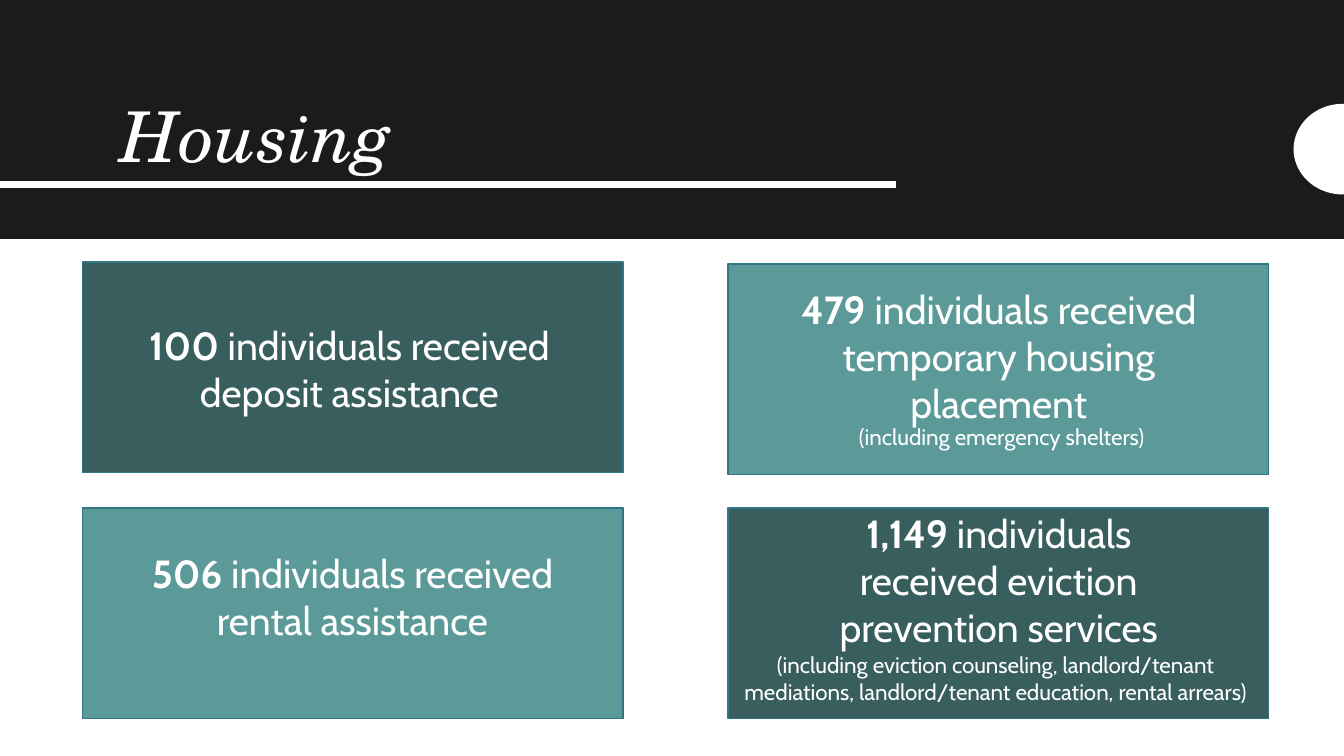
from dataclasses import dataclass

from lxml.etree import SubElement
from pptx import Presentation
from pptx.dml.color import RGBColor
from pptx.enum.shapes import MSO_CONNECTOR, MSO_SHAPE
from pptx.enum.text import MSO_ANCHOR, MSO_AUTO_SIZE, PP_ALIGN
from pptx.oxml.ns import qn
from pptx.util import Inches, Pt

TITLE = "Housing"
CARDS = [
    {"place": (0.82, 2.6), "tone": "deep", "text": (1.35, 3.14, 4.23, 1.04),
     "count": "100", "label": " individuals received deposit assistance"},
    {"place": (7.22, 2.62), "tone": "light", "text": (7.79, 2.78, 4.23, 1.51),
     "count": "479", "label": " individuals received temporary housing placement",
     "note": "(including emergency shelters)", "foot": (7.82, 4.15, 4.23, 0.37)},
    {"place": (0.82, 5.04), "tone": "light", "text": (1.38, 5.4, 4.23, 1.04),
     "count": "506", "label": " individuals received rental assistance"},
    {"place": (7.22, 5.04), "tone": "deep", "text": (7.79, 5, 4.23, 1.51),
     "count": "1,149", "label": " individuals received eviction prevention services",
     "note": "(including eviction counseling, landlord/tenant mediations, "
             "landlord/tenant education, rental arrears)",
     "foot": (7.16, 6.41, 5.43, 0.64)},
]
CARD = (5.36, 2.09)


@dataclass(frozen=True)
class Theme:
    dark: str = "1D1A1D"
    white: str = "FFFFFF"
    deep: str = "385E5D"
    light: str = "5C9A99"
    edge: str = "327587"
    serif: str = "TeX Gyre Schola"
    sans: str = "Cabin"
    head: float = 50
    main: float = 28
    note: float = 16


THEME = Theme()


def tint(name):
    return RGBColor.from_string(getattr(THEME, name))


def span(box):
    return [Inches(n) for n in box]


def add_shape(slide, kind, box, color, edge=None):
    shape = slide.shapes.add_shape(kind, *span(box))
    shape.shadow.inherit = False
    shape.fill.solid()
    shape.fill.fore_color.rgb = tint(color)
    if edge:
        shape.line.color.rgb = tint(edge)
        shape.line.width = Pt(1)
    else:
        shape.line.fill.background()


def set_font(para, face, size):
    para.font.name = face
    para.font.size = Pt(size)
    para.font.color.rgb = tint("white")


def add_text(slide, box, size, label, count=""):
    frame = slide.shapes.add_textbox(*span(box)).text_frame
    frame.word_wrap = True
    para = frame.paragraphs[0]
    para.alignment = PP_ALIGN.CENTER
    set_font(para, THEME.sans, size)
    if count:
        run = para.add_run()
        run.text = count
        run.font.bold = True
    para.add_run().text = label


def add_head(slide):
    add_shape(slide, MSO_SHAPE.RECTANGLE, (0, 0, 13.33, 2.37), "dark")
    rule = slide.shapes.add_connector(
        MSO_CONNECTOR.STRAIGHT, *span((0, 1.83, 8.89, 1.83)))
    rule.line.color.rgb = tint("white")
    rule.line.width = Pt(4.5)
    SubElement(rule._element.spPr, qn("a:effectLst"))
    add_shape(slide, MSO_SHAPE.OVAL, (12.83, 1.03, 0.98, 0.9), "white")

    title = slide.shapes.title
    title.left, title.top, title.width, title.height = span((1.1, 0.46, 10.91, 1.35))
    frame = title.text_frame
    frame.text = TITLE
    frame.auto_size = MSO_AUTO_SIZE.NONE
    frame.vertical_anchor = MSO_ANCHOR.BOTTOM
    para = frame.paragraphs[0]
    para.alignment = PP_ALIGN.LEFT
    para.line_spacing = 0.9
    para.font.italic = True
    set_font(para, THEME.serif, THEME.head)
    tree = slide.shapes._spTree
    tree.remove(title._element)
    tree.append(title._element)


def add_card(slide, card):
    add_shape(slide, MSO_SHAPE.RECTANGLE, card["place"] + CARD, card["tone"], "edge")
    add_text(slide, card["text"], THEME.main, card["label"], card["count"])
    if "note" in card:
        add_text(slide, card["foot"], THEME.note, card["note"])


def main():
    deck = Presentation()
    deck.slide_width, deck.slide_height = span((13.33, 7.5))
    slide = deck.slides.add_slide(deck.slide_layouts[5])
    slide.background.fill.solid()
    slide.background.fill.fore_color.rgb = tint("white")
    add_head(slide)
    for card in CARDS:
        add_card(slide, card)
    deck.save("out.pptx")


if __name__ == "__main__":
    main()
